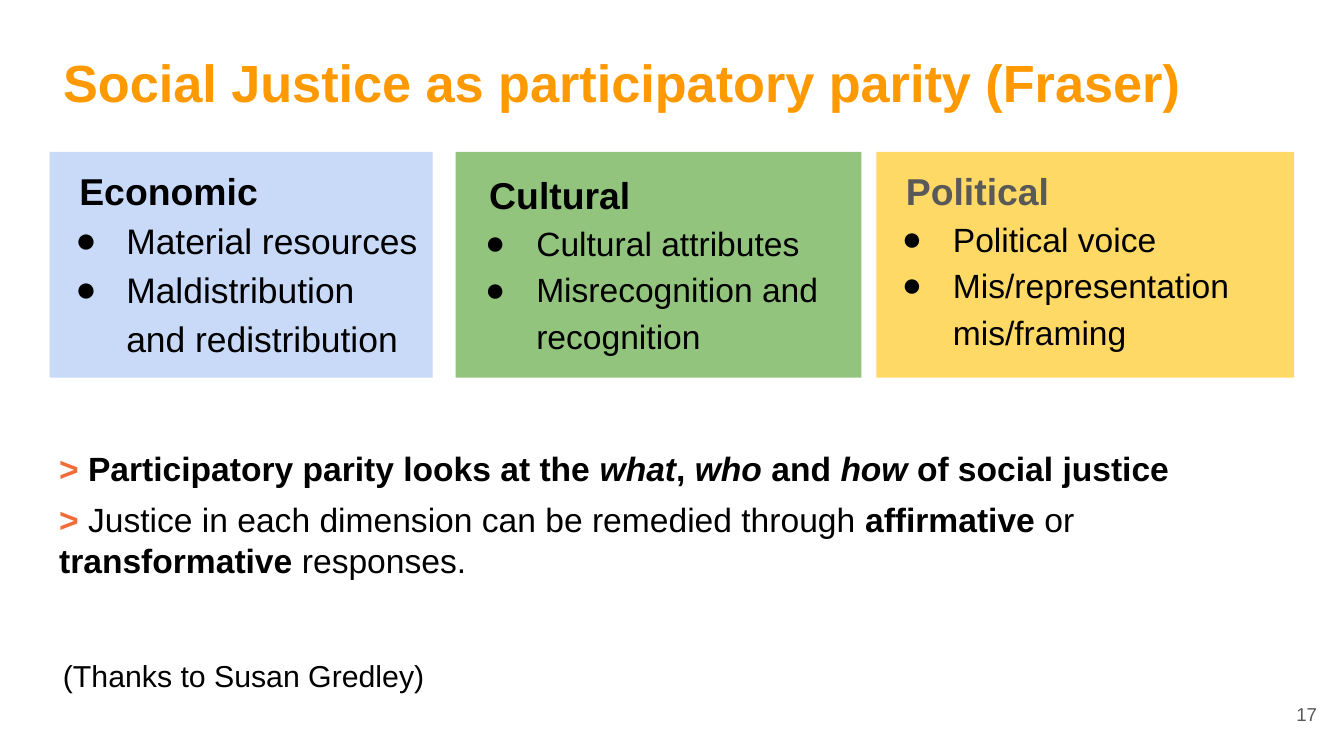
"""Build the slide on social justice as participatory parity."""
import pptx
import pptx.dml.color
import pptx.enum.text
import pptx.util
from lxml import etree
from pptx.oxml.ns import qn
from pptx.util import Inches

COLORS = {
    "black": "000000", "gray": "595959", "title": "FF9900", "marker": "F16C39",
    "economic": "C9DAF8", "cultural": "93C47D", "political": "FFD966",
}
FONT = "Arial"

HEADING = "Social Justice as participatory parity (Fraser)"
DIMENSIONS = [
    {"name": "Economic", "color": "black", "fill": "economic", "left": 0.37, "width": 2.85,
     "inset": 0.07, "size": 19,
     "points": ["Material resources", "Maldistribution and redistribution"]},
    {"name": "Cultural", "color": "black", "fill": "cultural", "left": 3.39, "width": 3.02,
     "inset": 0.1, "size": 18,
     "points": ["Cultural attributes", "Misrecognition and recognition"]},
    {"name": "Political", "color": "gray", "fill": "political", "left": 6.52, "width": 3.11,
     "inset": 0.07, "size": 18,
     "points": ["Political voice", "Mis/representation mis/framing"]},
]
STATEMENTS = [
    [(">", "b", "marker"), (" Participatory parity looks at the ", "b", "black"),
     ("what", "bi", "black"), (", ", "b", "black"), ("who", "bi", "black"),
     (" and ", "b", "black"), ("how ", "bi", "black"), ("of social justice", "b", "black")],
    [("> ", "b", "marker"),
     ("Justice in each dimension can be remedied through ", "", "black"),
     ("affirmative", "b", "black"), (" or ", "", "black"),
     ("transformative ", "b", "black"), ("responses.", "", "black")],
]
THANKS = "(Thanks to Susan Gredley)"
PAGE_NUMBER = "17"


def rgb(name):
    return pptx.dml.color.RGBColor.from_string(COLORS[name])


def place(shape, left, top, width, height, inset_x, inset_y, anchor="TOP"):
    shape.left, shape.top = Inches(left), Inches(top)
    shape.width, shape.height = Inches(width), Inches(height)
    frame = shape.text_frame
    frame.word_wrap = True
    frame.auto_size = pptx.enum.text.MSO_AUTO_SIZE.NONE
    frame.vertical_anchor = pptx.enum.text.MSO_ANCHOR[anchor]
    frame.margin_left = frame.margin_right = Inches(inset_x)
    frame.margin_top = frame.margin_bottom = Inches(inset_y)
    return frame


def write(frame, runs, size, first=False, bullet=False, indent=0, hanging=0,
          spacing=1.0, before=0, align="LEFT"):
    paragraph = frame.paragraphs[0] if first else frame.add_paragraph()
    properties = paragraph._p.get_or_add_pPr()
    properties.set("marL", str(Inches(indent)))
    properties.set("indent", str(Inches(hanging)))
    if bullet:
        color = etree.SubElement(properties, qn("a:buClr"))
        etree.SubElement(color, qn("a:srgbClr"), val=COLORS["black"])
        etree.SubElement(properties, qn("a:buFont"), typeface=FONT)
        etree.SubElement(properties, qn("a:buChar"), char="●")
    else:
        etree.SubElement(properties, qn("a:buNone"))
    paragraph.alignment = pptx.enum.text.PP_ALIGN[align]
    paragraph.line_spacing = spacing
    paragraph.space_before = pptx.util.Pt(before)
    for text, style, color in runs:
        run = paragraph.add_run()
        run.text = text
        run.font.name = FONT
        run.font.size = pptx.util.Pt(size)
        run.font.bold = "b" in style
        run.font.italic = "i" in style
        run.font.color.rgb = rgb(color)


def main():
    deck = pptx.Presentation()
    deck.slide_width = Inches(10)
    deck.slide_height = deck.slide_width * 9 // 16
    slide = deck.slides.add_slide(deck.slide_layouts.get_by_name("Comparison"))
    heading, *cards, statements = slide.placeholders

    frame = place(heading, 0.37, 0.27, 9.26, 0.63, 0.1, 0.1)
    write(frame, [(HEADING, "b", "title")], 28, first=True)

    for card, dimension in zip(cards, DIMENSIONS):
        inset = dimension["inset"]
        frame = place(card, dimension["left"], 1.13, dimension["width"], 1.68, inset, inset)
        card.fill.solid()
        card.fill.fore_color.rgb = rgb(dimension["fill"])
        write(frame, [(dimension["name"], "b", dimension["color"])], 20,
              first=True, indent=0.15, spacing=1.15)
        for point in dimension["points"]:
            write(frame, [(point, "", "black")], dimension["size"],
                  bullet=True, indent=0.5, hanging=-0.38, spacing=1.15)

    frame = place(statements, 0.37, 3.29, 8.52, 1.34, 0.07, 0.04)
    for index, runs in enumerate(STATEMENTS):
        write(frame, runs, 18, first=index == 0, before=6 * index)

    thanks = slide.shapes.add_textbox(0, 0, 0, 0)
    frame = place(thanks, 0.37, 4.79, 9.63, 0.31, 0.1, 0.1)
    write(frame, [(THANKS, "", "black")], 16.2, first=True)

    page_number = slide.shapes.add_textbox(0, 0, 0, 0)
    frame = place(page_number, 9.27, 5.1, 0.6, 0.43, 0.07, 0.07, "MIDDLE")
    write(frame, [(PAGE_NUMBER, "", "gray")], 10, first=True, align="RIGHT")

    deck.save("out.pptx")


if __name__ == "__main__":
    main()
